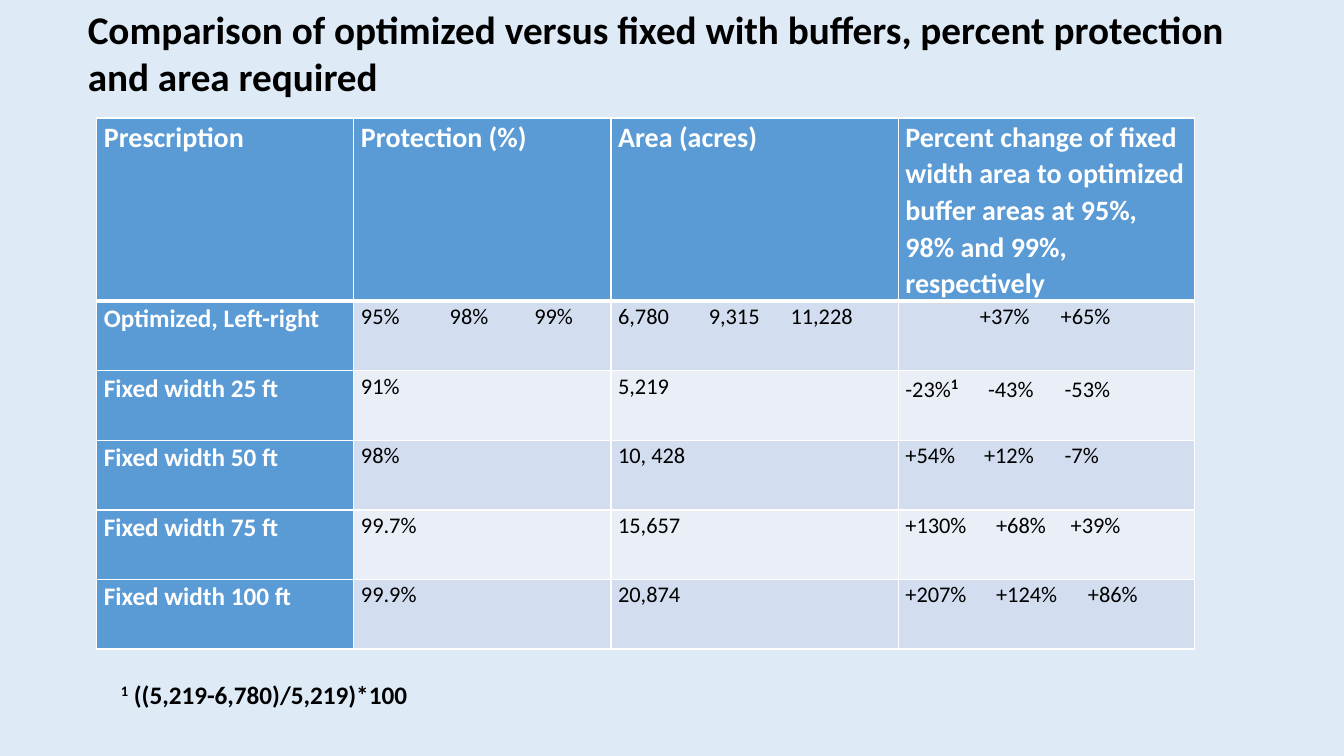
"""Build a slide comparing optimized and fixed width buffers in a table."""
from dataclasses import dataclass

from pptx import Presentation
from pptx.dml.color import RGBColor
from pptx.enum.text import MSO_ANCHOR as Anchor, MSO_AUTO_SIZE as AutoSize, PP_ALIGN as Align
from pptx.oxml import parse_xml
from pptx.oxml.ns import nsdecls
from pptx.util import Inches, Pt

COLORS = {
    "page": "DEEBF7", "accent": "5B9BD5", "band": "D2DEEF",
    "pale": "EAEFF7", "white": "FFFFFF", "black": "000000",
}
FONT = "Calibri"
WIDTH, HEIGHT = Inches(13.33), Inches(7.5)
COLUMN_SHARES = (19.13, 19.13, 21.38, 22.05)
HEADER_SHARE, ROW_SHARE = 23.87, 9.2


@dataclass(frozen=True)
class Span:
    text: str
    size: float | None = None
    bold: bool | None = None
    raised: bool = False


@dataclass(frozen=True)
class Entry:
    lines: tuple[tuple[Span, ...], ...]
    tabs: tuple[float, ...] = ()


def across(share: float) -> int:
    """Return a percentage of the slide width."""
    return round(WIDTH * share / 100)


def down(share: float) -> int:
    """Return a percentage of the slide height."""
    return round(HEIGHT * share / 100)


def entry(*lines: str, tabs: tuple[float, ...] = ()) -> Entry:
    """Make a table entry of plain lines."""
    return Entry(tuple((Span(line),) for line in lines), tabs)


HEADER = (
    entry("Prescription"), entry("Protection (%)"), entry("Area (acres)"),
    entry("Percent change of fixed width area to optimized",
          "buffer areas at 95%, 98% and 99%, respectively"),
)
CHANGE_25 = Entry(
    ((Span("-23%"), Span("1", 18, True, True), Span("\t-43%\t-53%")),), (6.15, 11.85))
ROWS = (
    (entry("Optimized, Left-right"),
     entry("95%\t98%\t99%", tabs=(6.6, 12.9)),
     entry("6,780\t9,315\t11,228", tabs=(6.75, 12.83)),
     entry("\t+37%\t+65%", tabs=(5.55, 11.55))),
    (entry("Fixed width 25 ft"), entry("91%"), entry("5,219"), CHANGE_25),
    (entry("Fixed width 50 ft"), entry("98%"), entry("10, 428"),
     entry("+54%\t+12%\t-7%", tabs=(5.85, 11.85))),
    (entry("Fixed width 75 ft"), entry("99.7%"), entry("15,657"),
     entry("+130%\t+68%\t+39%", tabs=(6.75, 12.3))),
    (entry("Fixed width 100 ft"), entry("99.9%"), entry("20,874"),
     entry("+207%\t+124%\t+86%", tabs=(6.75, 13.58))),
)


def write(frame, content: Entry, *, size: float, color: str = "black",
          bold: bool = True, spacing: float = 1.0) -> None:
    """Fill a text frame with formatted paragraphs."""
    for index, line in enumerate(content.lines):
        para = frame.add_paragraph() if index else frame.paragraphs[0]
        para.alignment = Align.LEFT
        para.line_spacing = spacing
        if content.tabs:
            stops = "".join(f'<a:tab pos="{across(tab)}" algn="l"/>' for tab in content.tabs)
            para._p.get_or_add_pPr().append(
                parse_xml(f'<a:tabLst {nsdecls("a")}>{stops}</a:tabLst>'))
        for span in line:
            run = para.add_run()
            run.text = span.text
            run.font.name = FONT
            run.font.size = Pt(span.size or size)
            run.font.bold = bold if span.bold is None else span.bold
            run.font.color.rgb = RGBColor.from_string(COLORS[color])
            if span.raised:
                run._r.get_or_add_rPr().set("baseline", "30000")


def style_cell(cell, *, fill: str, top: float = 1, bottom: float = 1) -> None:
    """Set the margins, borders and fill of a cell."""
    cell.margin_left = cell.margin_right = across(0.53)
    cell.margin_top = cell.margin_bottom = 0
    properties = cell._tc.get_or_add_tcPr()
    for side, weight in (("L", 1), ("R", 1), ("T", top), ("B", bottom)):
        properties.append(parse_xml(
            f'<a:ln{side} {nsdecls("a")} w="{Pt(weight)}"><a:solidFill>'
            f'<a:srgbClr val="{COLORS["white"]}"/></a:solidFill></a:ln{side}>'))
    cell.fill.solid()
    cell.fill.fore_color.rgb = RGBColor.from_string(COLORS[fill])


def add_buffer_table(page) -> None:
    """Draw the table of prescriptions."""
    height = HEADER_SHARE + ROW_SHARE * len(ROWS)
    table = page.shapes.add_table(
        len(ROWS) + 1, len(COLUMN_SHARES), across(7.2), down(15.6),
        across(sum(COLUMN_SHARES)), down(height)).table
    for column, share in zip(table.columns, COLUMN_SHARES):
        column.width = across(share)
    for r, entries in enumerate((HEADER, *ROWS)):
        table.rows[r].height = down(ROW_SHARE if r else HEADER_SHARE)
        for c, content in enumerate(entries):
            cell = table.cell(r, c)
            heading = r == 0 or c == 0
            band = "band" if r % 2 else "pale"
            style_cell(cell, fill="accent" if heading else band,
                       top=3 if r == 1 else 1, bottom=1 if r else 3)
            size = 20 if r == 0 else 18 if c == 0 else 16
            write(cell.text_frame, content, size=size, bold=heading,
                  color="white" if heading else "black", spacing=1.07)


def add_title(page) -> None:
    """Place the two-line title."""
    title = page.shapes.title
    title.left, title.top = across(5.78), 0
    title.width, title.height = across(87.83), down(13.87)
    frame = title.text_frame
    frame.word_wrap = True
    frame.auto_size = AutoSize.NONE
    frame.vertical_anchor = Anchor.TOP
    write(frame, entry("Comparison of optimized versus fixed with buffers, percent protection",
                       "and area required"), size=28)


def add_footnote(page) -> None:
    """Place the formula under the table."""
    box = page.shapes.add_textbox(across(8.25), down(89.2), across(23.18), down(5.33))
    box.text_frame.word_wrap = True
    note = Entry(((Span("1", raised=True), Span(" ((5,219-6,780)/5,219)*100")),))
    write(box.text_frame, note, size=18)


def main() -> None:
    """Build and save the deck."""
    deck = Presentation()
    deck.slide_width, deck.slide_height = WIDTH, HEIGHT
    page = deck.slides.add_slide(deck.slide_layouts[5])
    page.background.fill.solid()
    page.background.fill.fore_color.rgb = RGBColor.from_string(COLORS["page"])
    add_buffer_table(page)
    add_title(page)
    add_footnote(page)
    deck.save("out.pptx")


if __name__ == "__main__":
    main()
